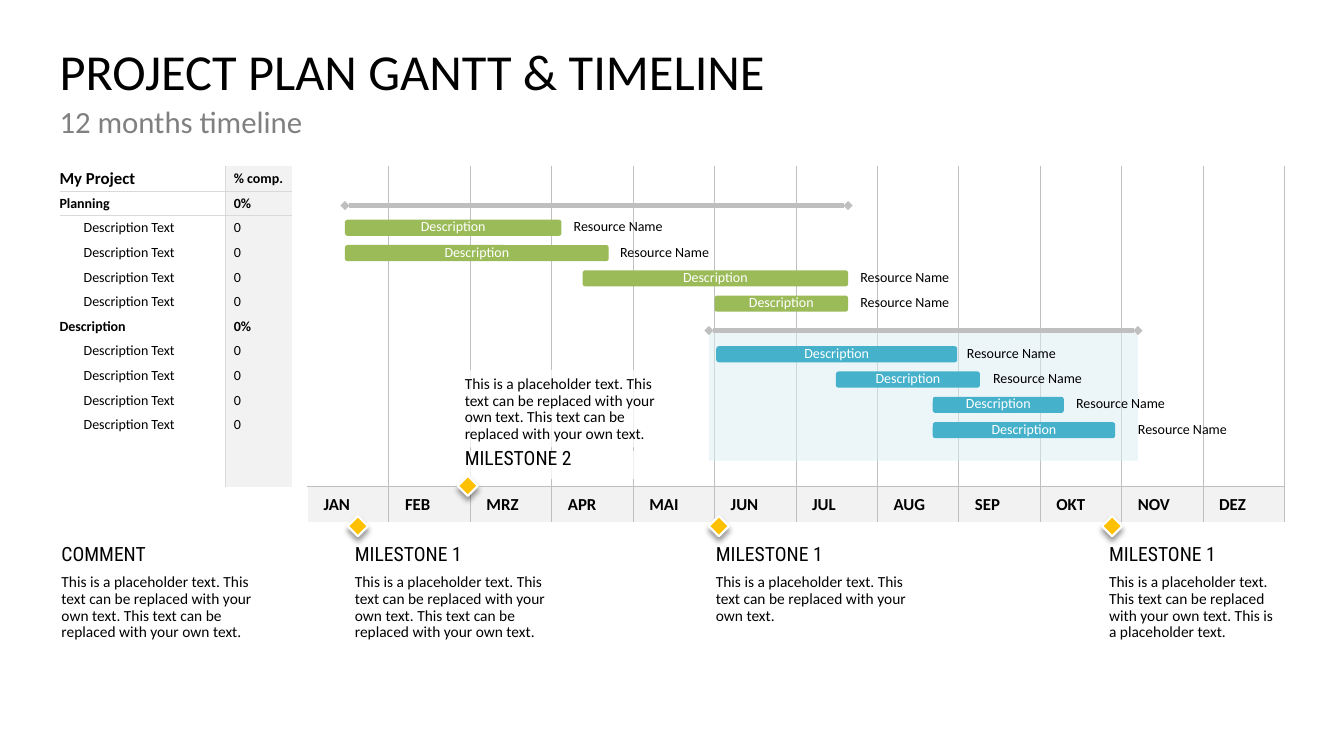
from lxml.etree import SubElement
from pptx import Presentation
from pptx.dml.color import RGBColor
from pptx.enum.shapes import MSO_CONNECTOR, MSO_SHAPE as Preset
from pptx.enum.text import MSO_ANCHOR as Anchor, PP_ALIGN as Align
from pptx.oxml.ns import qn
from pptx.util import Inches, Pt

COLORS = {
    "black": "000000", "white": "FFFFFF", "subtitle": "808080", "band": "F2F2F2",
    "rule": "D9D9D9", "grid": "BFBFBF", "planning": "9BBB59", "description": "45B1CB",
    "phase": "DAEFF5", "marker": "FFC000",
}
RGB = {name: RGBColor.from_string(value) for name, value in COLORS.items()}
WIDTH, HEIGHT = 13.33, 7.5
LEFT, TOP = 0.59, 1.65
CHART_LEFT, CHART_WIDTH = 3.05, 9.69
MONTHS = "JAN FEB MRZ APR MAI JUN JUL AUG SEP OKT NOV DEZ".split()
MONTH = CHART_WIDTH / len(MONTHS)
PLAN_HEIGHT, MONTH_ROW = 3.18, 0.35
BAR_TOP, BAR_PITCH, BAR_HEIGHT = 2.18, 0.251, 0.16
SENTENCE = "This is a placeholder text."
REPLACE = "This text can be replaced with your own text."
NO_STYLE = "{2D5ABB26-0587-4C30-8999-92F81FD0307C}"

deck = Presentation()
deck.slide_width, deck.slide_height = Inches(WIDTH), Inches(HEIGHT)
slide = deck.slides.add_slide(deck.slide_layouts[6])


def box(x, y, w, h, preset=None, fill=None, alpha=None):
    place = [Inches(v) for v in (x, y, w, h)]
    if preset is None:
        return slide.shapes.add_textbox(*place)
    shape = slide.shapes.add_shape(preset, *place)
    shape.shadow.inherit = False
    shape.line.fill.background()
    shape.fill.solid()
    shape.fill.fore_color.rgb = RGB[fill]
    if alpha:
        tint = shape.fill._xPr.find(qn("a:solidFill"))[0]
        SubElement(tint, qn("a:alpha"), val=str(alpha * 1000))
    return shape


def write(frame, text, size, color="black", face="Calibri", margins=(0, 0, 0, 0),
          anchor=Anchor.TOP, align=Align.LEFT, spacing=0.8, after=10):
    paragraph = frame.paragraphs[0]
    run = paragraph.add_run()
    run.text = text
    run.font.color.rgb = RGB[color]
    sides = ("margin_left", "margin_top", "margin_right", "margin_bottom")
    formats = [
        (frame, {"word_wrap": True, "vertical_anchor": anchor,
                 **{side: Inches(m) for side, m in zip(sides, margins)}}),
        (paragraph, {"alignment": align, "line_spacing": spacing, "space_after": Pt(after)}),
        (run.font, {"size": Pt(size), "name": face}),
    ]
    for target, values in formats:
        for name, value in values.items():
            setattr(target, name, value)


write(box(LEFT, 0.47, 12.15, 1.18).text_frame, "PROJECT PLAN GANTT & TIMELINE", 36, spacing=0.9, after=0)
write(box(LEFT, 1.06, 12.15, 0.59).text_frame, "12 months timeline", 22, "subtitle", spacing=0.9)

phases = [("Planning", "0%")] + [("Description Text", "0")] * 4
phases += [("Description", "0%")] + [("Description Text", "0")] * 4
tasks = [("My Project", "% comp.")] + phases + [("", "")] * 2
task_cells = []
for row, (task, done) in enumerate(tasks):
    bold = row == 0 or done == "0%"
    edges = {"T": ("rule", 0.5)} if row == 1 else {"B": ("rule", 0.5)} if row == 0 else {}
    task_cells.append([
        (task, 10 if row else 12, bold, 0 if bold else 0.24, None, {"R": ("rule", 0.5), **edges}),
        (done, 10, bold, 0.09, "band", {"L": ("rule", 0.5), **edges}),
    ])
month_cells = [[], []]
for column, month in enumerate(MONTHS):
    sides = {"L": ("grid", 0.75) if column else ("white", 1), "R": ("grid", 0.75)}
    plan_fill = "white" if column > 5 else None
    month_cells[0].append(("", 10, False, 0, plan_fill, {**sides, "T": ("white", 1), "B": ("grid", 1)}))
    month_cells[1].append((month, 12, True, 0.16, "band", {**sides, "T": ("grid", 1), "B": ("white", 1)}))

grids = [
    (LEFT, [1.64, 0.67], [PLAN_HEIGHT / len(tasks)] * len(tasks), task_cells),
    (CHART_LEFT, [MONTH] * len(MONTHS), [PLAN_HEIGHT, MONTH_ROW], month_cells),
]
for x, widths, heights, cells in grids:
    grid = slide.shapes.add_table(len(heights), len(widths), Inches(x), Inches(TOP),
                                  Inches(sum(widths)), Inches(sum(heights))).table
    grid.first_row = grid.horz_banding = False
    grid._tbl.tblPr.find(qn("a:tableStyleId")).text = NO_STYLE
    for column, width in zip(grid.columns, widths):
        column.width = Inches(width)
    for r, height in enumerate(heights):
        grid.rows[r].height = Inches(height)
        for c, (text, size, bold, indent, fill, edges) in enumerate(cells[r]):
            cell = grid.cell(r, c)
            margins = {"margin_left": indent, "margin_top": 0, "margin_right": 0.01, "margin_bottom": 0}
            for name, value in margins.items():
                setattr(cell, name, Inches(value))
            cell.vertical_anchor = Anchor.MIDDLE
            paragraph = cell.text_frame.paragraphs[0]
            if text:
                run = paragraph.add_run()
                run.text = text
                run.font.color.rgb = RGB["black"]
                for name, value in {"size": Pt(size), "name": "Calibri", "bold": bold}.items():
                    setattr(run.font, name, value)
            else:
                SubElement(paragraph._p, qn("a:endParaRPr"), sz=str(size * 100))
            for side in "LRTB":
                if side in edges:
                    color, weight = edges[side]
                    edge = SubElement(cell._tc.get_or_add_tcPr(), qn(f"a:ln{side}"), w=str(Pt(weight)))
                    SubElement(SubElement(edge, qn("a:solidFill")), qn("a:srgbClr"), val=COLORS[color])
            if fill:
                cell.fill.solid()
                cell.fill.fore_color.rgb = RGB[fill]
            else:
                cell.fill.background()

milestones = [
    (3.52, "MILESTONE 1", f"{SENTENCE} {REPLACE} {REPLACE}", 2.1),
    (7.1, "MILESTONE 1", f"{SENTENCE} {REPLACE}", 2.1),
    (11, "MILESTONE 1", f"{SENTENCE} {REPLACE} {SENTENCE}", 1.81),
    (4.61, "MILESTONE 2", f"{SENTENCE} {REPLACE} {REPLACE}", 2.1),
    (0.61, "COMMENT", f"{SENTENCE} {REPLACE} {REPLACE}", 2.1),
]
for x, heading, body, width in milestones:
    above = heading == "MILESTONE 2"
    heading_top, marker_top, body_top = (4.47, 4.72, 3.67) if above else (5.42, 5.12, 5.65)
    veil = (Preset.RECTANGLE, "white", 76) if above else ()
    write(box(x, heading_top, 2.1, 0.28, *veil).text_frame, heading, 14, face="Roboto Condensed")
    if heading != "COMMENT":
        marker = box(x - 0.07, marker_top, 0.2, 0.2, Preset.DIAMOND, "marker")
        marker.line.color.rgb = RGB["white"]
        marker.line.width = Pt(1.5)
        glow = SubElement(marker._element.spPr.find(qn("a:effectLst")), qn("a:outerShdw"),
                          blurRad=str(Pt(4)), dist=str(Pt(3)), dir="5400000", rotWithShape="0")
        shade = SubElement(glow, qn("a:srgbClr"), val=COLORS["black"])
        SubElement(shade, qn("a:alpha"), val="40000")
    write(box(x, body_top, width, 0.77, *veil).text_frame, body, 11, margins=(0, 0.05, 0.1, 0.05),
          anchor=Anchor.BOTTOM if above else Anchor.TOP, spacing=0.9, after=4)

schedule = [
    ("planning", 0.46, 6.64, -0.56, 0,
     [(0.46, 2.66, 3.27), (0.46, 3.24, 3.84), (3.38, 3.26, 6.79), (5, 1.64, 6.79)]),
    ("description", 4.93, 10.2, 4.38, 5,
     [(5.02, 2.96, 8.1), (6.49, 1.77, 8.42), (7.68, 1.61, 9.44), (7.68, 2.24, 10.2)]),
]
for phase, begin, end, summary_row, first_row, bars in schedule:
    summary_y = BAR_TOP + summary_row * BAR_PITCH
    begin_x, end_x = (CHART_LEFT + m * MONTH for m in (begin, end))
    if phase == "description":
        box(begin_x, summary_y, end_x - begin_x, 1.29, Preset.RECTANGLE, "phase", 50)
    for row, (start, length, resource) in enumerate(bars, first_row):
        y = BAR_TOP + row * BAR_PITCH
        bar = box(CHART_LEFT + start * MONTH, y, length * MONTH, BAR_HEIGHT, Preset.ROUNDED_RECTANGLE, phase)
        write(bar.text_frame, "Description", 10, "white", anchor=Anchor.MIDDLE, align=Align.CENTER)
        label = box(CHART_LEFT + resource * MONTH, y, 2, BAR_HEIGHT)
        write(label.text_frame, "Resource Name", 10, anchor=Anchor.MIDDLE)
    summary = slide.shapes.add_connector(MSO_CONNECTOR.STRAIGHT, *map(Inches, (begin_x, summary_y, end_x, summary_y)))
    summary.line.color.rgb = RGB["grid"]
    summary.line.width = Pt(3.25)
    for tip in ("a:headEnd", "a:tailEnd"):
        SubElement(summary.line._ln, qn(tip), type="diamond", w="sm", len="sm")
    SubElement(summary._element.spPr, qn("a:effectLst"))

deck.save("out.pptx")
